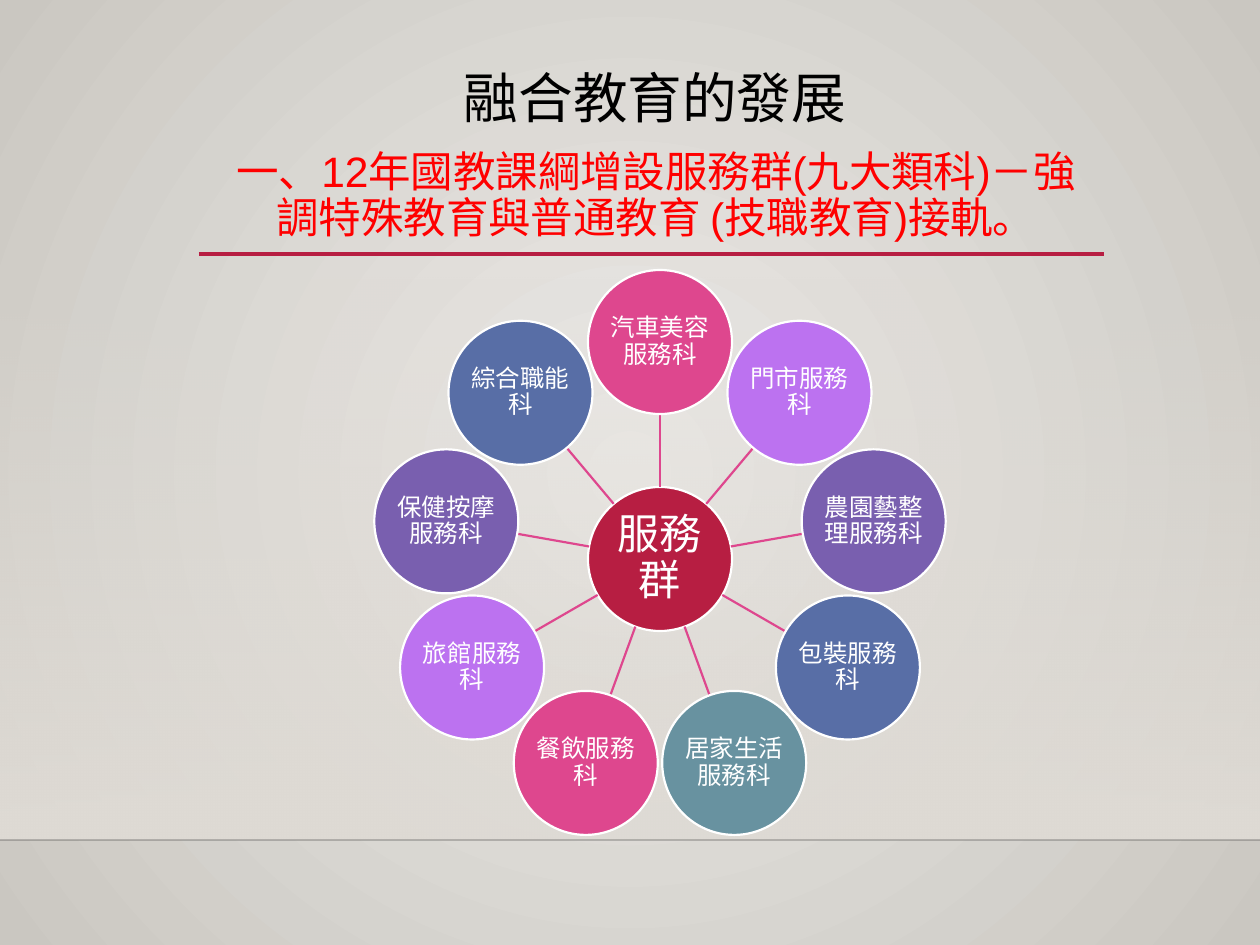
import math

from lxml import etree
from pptx import Presentation, util as u
from pptx.dml.color import RGBColor
from pptx.enum import shapes, text
from pptx.oxml.ns import qn

PX = 914400 // 126  # one px in EMU

WHITE = RGBColor(0xFF, 0xFF, 0xFF)
BLACK = RGBColor(0, 0, 0)
RED = RGBColor(0xFF, 0, 0)
CRIMSON = RGBColor(0xB7, 0x1E, 0x42)
PINK = RGBColor(0xDE, 0x47, 0x8E)
LILAC = RGBColor(0xBC, 0x72, 0xF0)
PURPLE = RGBColor(0x79, 0x5F, 0xAF)
BLUE = RGBColor(0x58, 0x6E, 0xA6)
TEAL = RGBColor(0x68, 0x92, 0xA0)
EDGE = RGBColor(0, 0, 1)
BG_CENTER = RGBColor(0xEC, 0xEA, 0xE7)
BG_RIM = RGBColor(0xCA, 0xC7, 0xC1)
FLOOR = RGBColor(0xDF, 0xDB, 0xD5)

TITLE = "融合教育的發展"
SUBTITLE = "一、12年國教課綱增設服務群(九大類科)－強調特殊教育與普通教育 (技職教育)接軌。"
HUB = "服務群"
DEPARTMENTS = [  # clockwise from the top
    ("汽車美容服務科", PINK),
    ("門市服務科", LILAC),
    ("農園藝整理服務科", PURPLE),
    ("包裝服務科", BLUE),
    ("居家生活服務科", TEAL),
    ("餐飲服務科", PINK),
    ("旅館服務科", LILAC),
    ("保健按摩服務科", PURPLE),
    ("綜合職能科", BLUE),
]
CENTER_X, CENTER_Y = 660, 559
ORBIT = 217
DIAMETER = 144


def px(n):
    return round(n * PX)


def set_text(sp, content, size, color, font="Calibri", inset=None,
             anchor=text.MSO_ANCHOR.TOP):
    tf = sp.text_frame
    tf.word_wrap = True
    tf.vertical_anchor = anchor
    if inset is not None:
        tf.margin_left = tf.margin_right = px(inset)
        tf.margin_top = tf.margin_bottom = px(inset)
    p = tf.paragraphs[0]
    p.alignment = text.PP_ALIGN.CENTER
    p.line_spacing = 0.9
    r = p.add_run()
    r.text = content
    r.font.size = u.Pt(size)
    r.font.name = font
    r.font.color.rgb = color


def add_textbox(s, box, content, **style):
    set_text(s.shapes.add_textbox(*map(px, box)), content, **style)


def add_line(s, start, end, color, width):
    ln = s.shapes.add_connector(shapes.MSO_CONNECTOR.STRAIGHT,
                                *map(px, (*start, *end)))
    ln.line.color.rgb = color
    ln.line.width = u.Pt(width)
    etree.SubElement(ln._element.spPr, qn("a:effectLst"))
    return ln


def add_circle(s, x, y, color, content, **style):
    r = DIAMETER / 2
    sp = s.shapes.add_shape(shapes.MSO_SHAPE.OVAL,
                            *map(px, (x - r, y - r, DIAMETER, DIAMETER)))
    sp.shadow.inherit = False
    sp.fill.solid()
    sp.fill.fore_color.rgb = color
    sp.line.color.rgb = WHITE
    sp.line.width = u.Pt(1.25)
    set_text(sp, content, color=WHITE, anchor=text.MSO_ANCHOR.MIDDLE, **style)


def set_alpha(parent, percent):
    """Give the first colour inside an XML element an opacity."""
    color = next(parent.iter(qn("a:srgbClr")))
    etree.SubElement(color, qn("a:alpha"), val=str(percent * 1000))


def set_gradient(fill, first, last):
    fill.gradient()
    for stop, color, position in zip(fill.gradient_stops, (first, last), (0, 1)):
        stop.color.rgb = color
        stop.position = position


def add_backdrop(s):
    fill = s.background.fill
    set_gradient(fill, BG_CENTER, BG_RIM)
    lin = next(s._element.iter(qn("a:lin")))
    radial = etree.Element(qn("a:path"), path="circle")
    etree.SubElement(radial, qn("a:fillToRect"),
                     dict.fromkeys("ltrb", "50000"))
    lin.getparent().replace(lin, radial)

    sp = s.shapes.add_shape(shapes.MSO_SHAPE.RECTANGLE,
                            *map(px, (0, 277, 1260, 563)))
    sp.shadow.inherit = False
    sp.line.fill.background()
    set_gradient(sp.fill, FLOOR, FLOOR)
    sp.fill.gradient_angle = 270  # counter-clockwise: runs top to bottom
    set_alpha(sp._element.spPr, 0)

    horizon = add_line(s, (0, 840), (1260, 840), EDGE, 1)
    set_alpha(horizon._element.spPr, 20)


def add_wheel(s):
    def on_ray(angle, distance):
        return (CENTER_X + distance * math.sin(angle),
                CENTER_Y - distance * math.cos(angle))

    add_circle(s, CENTER_X, CENTER_Y, CRIMSON, HUB, size=24, inset=3)
    for i, (name, color) in enumerate(DEPARTMENTS):
        angle = math.tau * i / len(DEPARTMENTS)
        add_line(s, on_ray(angle, DIAMETER / 2),
                 on_ray(angle, ORBIT - DIAMETER / 2), PINK, 1.25)
        add_circle(s, *on_ray(angle, ORBIT), color, name, size=14, inset=1)


def main():
    prs = Presentation()
    prs.slide_width, prs.slide_height = px(1260), px(945)
    s = prs.slides.add_slide(prs.slide_layouts[6])
    add_backdrop(s)
    add_line(s, (199, 254), (1104, 254), CRIMSON, 2.5)
    add_textbox(s, (203, 145, 906, 128), SUBTITLE, size=24.3, color=RED,
                font="Arial")
    add_wheel(s)
    add_textbox(s, (253, 65, 804, 128), TITLE, size=31.2, color=BLACK)
    prs.save("out.pptx")


if __name__ == "__main__":
    main()
